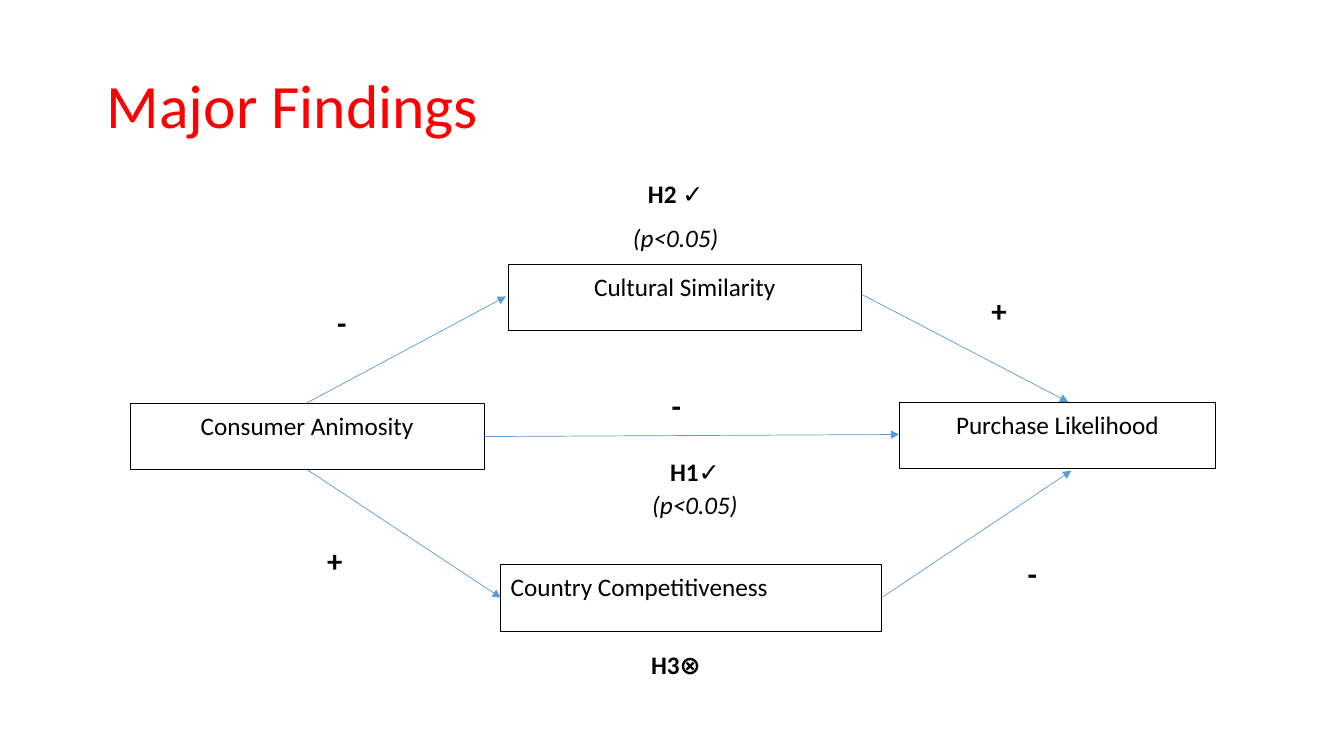
import pptx
import pptx.dml.color
import pptx.enum.shapes
import pptx.enum.text
import pptx.oxml
import pptx.oxml.ns
import pptx.util

Cm = pptx.util.Cm
Pt = pptx.util.Pt
ALIGN = pptx.enum.text.PP_ALIGN
COLORS = {"title": "FF0000", "text": "000000", "box": "FFFFFF", "arrow": "5B9BD5"}
FONT = "Calibri"
BOX_HEIGHT = 1.68
SIGN_SIZE = (2.29, 1.19)

FACTORS = [
    ("Purchase Likelihood", 19.38, 5.81, 7.98, ALIGN.CENTER),
    ("Consumer Animosity", 0, 5.84, 8.92, ALIGN.CENTER),
    ("Cultural Similarity", 9.52, 2.33, 8.92, ALIGN.CENTER),
    ("Country Competitiveness", 9.34, 9.9, 9.6, ALIGN.LEFT),
]
ARROWS = [
    (8.94, 6.68, 19.38, 6.63),
    (4.44, 5.84, 9.47, 3.15),
    (18.44, 3.1, 23.64, 5.81),
    (18.97, 10.72, 23.72, 7.54),
    (4.47, 7.52, 9.34, 10.74),
]
SIGNS = [
    ("-", 12.62, 5.23),
    ("+", 20.75, 2.84),
    ("-", 21.59, 9.47),
    ("-", 4.19, 3.15),
    ("+", 4.01, 9.14),
]
HYPOTHESES = [
    ([["H1✓ ", "(p<0.05)"]], 12.62, 7.01, 3.23, 1.7),
    ([["H2 ✓"], ["(p<0.05)"]], 10.89, 0, 5.72, 2.03),
    ([["H3⊗"]], 12.7, 11.86, 2.11, 1.37),
]


def rgb(name):
    """Return the named colour."""
    return pptx.dml.color.RGBColor.from_string(COLORS[name])


def style_run(run, size, color="text", bold=False, italic=False):
    """Format one run."""
    run.font.name = FONT
    run.font.size = Pt(size)
    run.font.color.rgb = rgb(color)
    run.font.bold = bold
    run.font.italic = italic


def add_box(slide, box, paragraphs, size, bold=False, outlined=False, align=ALIGN.CENTER):
    """Add a white rectangle holding paragraphs of runs; p-values are italic."""
    shape = slide.shapes.add_shape(
        pptx.enum.shapes.MSO_SHAPE.RECTANGLE, *(Cm(value) for value in box))
    shape.shadow.inherit = False
    shape.fill.solid()
    shape.fill.fore_color.rgb = rgb("box")
    if outlined:
        shape.line.color.rgb = rgb("text")
        shape.line.width = Pt(0.5)
    else:
        shape.line.fill.background()
    frame = shape.text_frame
    frame.word_wrap = True
    frame.vertical_anchor = pptx.enum.text.MSO_ANCHOR.TOP
    for index, texts in enumerate(paragraphs):
        paragraph = frame.add_paragraph() if index else frame.paragraphs[0]
        paragraph.alignment = align
        paragraph.line_spacing = 1.07
        paragraph.space_after = Pt(8)
        for text in texts:
            run = paragraph.add_run()
            run.text = text
            is_p_value = text.startswith("(p")
            style_run(run, size, bold=bold and not is_p_value, italic=is_p_value)


def add_arrow(slide, start_x, start_y, end_x, end_y):
    """Add a thin line with an arrowhead at its end."""
    arrow = slide.shapes.add_connector(
        pptx.enum.shapes.MSO_CONNECTOR.STRAIGHT,
        Cm(start_x), Cm(start_y), Cm(end_x), Cm(end_y))
    arrow.line.color.rgb = rgb("arrow")
    arrow.line.width = Pt(0.5)
    properties = arrow.line._get_or_add_ln()
    head = pptx.oxml.parse_xml(
        f'<a:tailEnd {pptx.oxml.ns.nsdecls("a")} type="triangle"/>')
    properties.append(head)
    properties.getparent().append(
        pptx.oxml.parse_xml(f'<a:effectLst {pptx.oxml.ns.nsdecls("a")}/>'))


def add_title(slide, left, top, width, height):
    """Place the slide title in the given box."""
    shape = slide.shapes.add_textbox(Cm(left), Cm(top), Cm(width), Cm(height))
    frame = shape.text_frame
    frame.word_wrap = True
    frame.vertical_anchor = pptx.enum.text.MSO_ANCHOR.MIDDLE
    frame.text = "Major Findings"
    paragraph = frame.paragraphs[0]
    paragraph.line_spacing = 0.9
    style_run(paragraph.runs[0], 44, "title")


def add_model(slide, left, top):
    """Place the path model with its upper left corner at the given point."""
    for name, x, y, width, align in FACTORS:
        add_box(slide, (left + x, top + y, width, BOX_HEIGHT), [[name]], 18,
                outlined=True, align=align)
    for sign, x, y in SIGNS:
        add_box(slide, (left + x, top + y, *SIGN_SIZE), [[sign]], 22, bold=True)
    for paragraphs, x, y, width, height in HYPOTHESES:
        add_box(slide, (left + x, top + y, width, height), paragraphs, 18, bold=True)
    for start_x, start_y, end_x, end_y in ARROWS:
        add_arrow(slide, left + start_x, top + start_y, left + end_x, top + end_y)


def main():
    """Build and save the slide."""
    presentation = pptx.Presentation()
    presentation.slide_width = Cm(33.87)
    presentation.slide_height = Cm(19.05)
    slide = presentation.slides.add_slide(presentation.slide_layouts[6])
    add_title(slide, 2.44, 2.06, 29.21, 1.35)
    add_model(slide, 3.28, 4.32)
    presentation.save("out.pptx")


if __name__ == "__main__":
    main()
